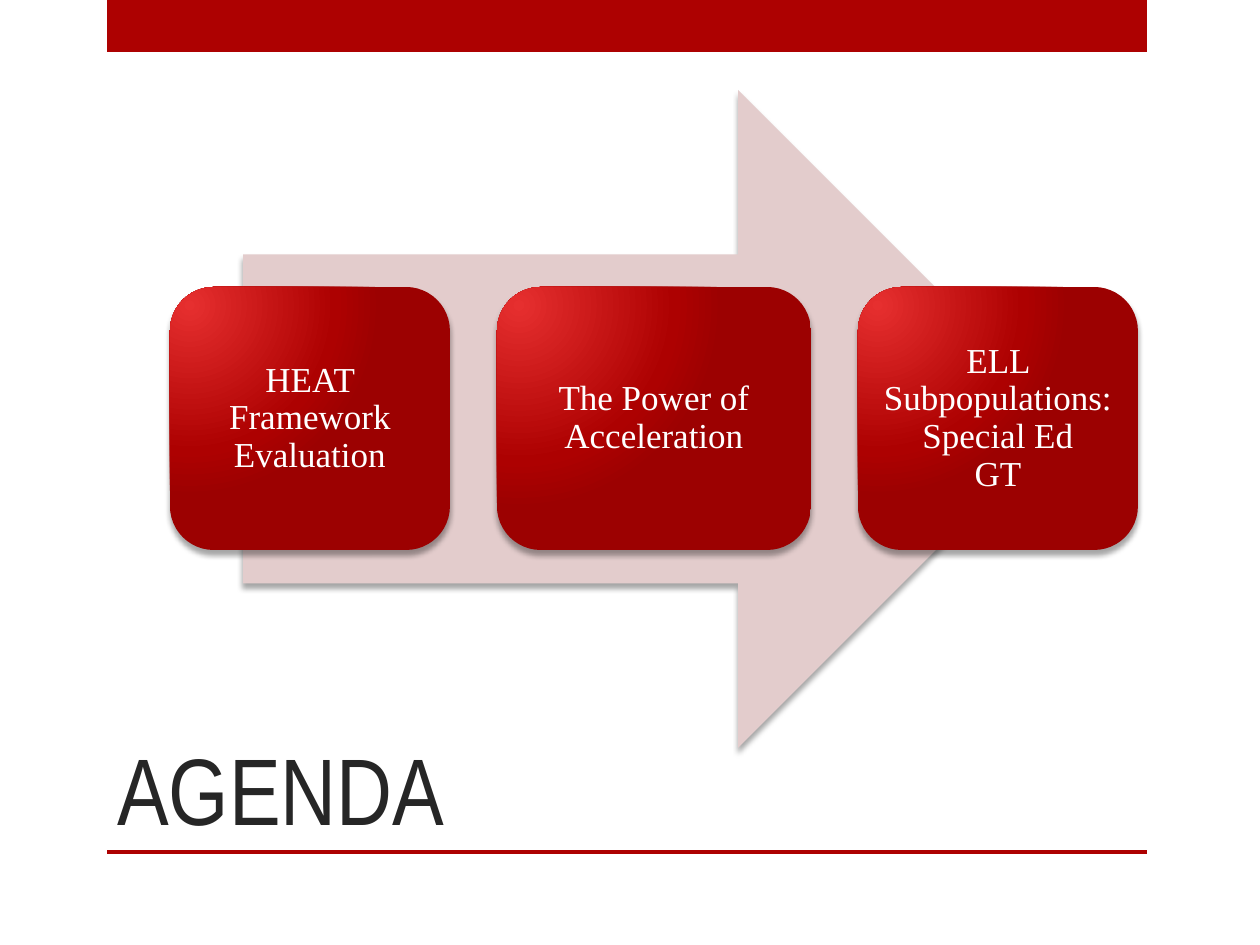
import pptx
import pptx.util
import pptx.dml.color
import pptx.enum.shapes
import pptx.enum.text
import pptx.oxml
import pptx.oxml.ns

PX = 914400 / 126
SHAPE = pptx.enum.shapes.MSO_SHAPE
ANCHOR = pptx.enum.text.MSO_ANCHOR
ALIGN = pptx.enum.text.PP_ALIGN
NS = pptx.oxml.ns.nsdecls("a")


def px(length):
    return pptx.util.Emu(round(length * PX))


def color(hex_value):
    return pptx.dml.color.RGBColor.from_string(hex_value)


class AgendaSlide:
    RED = "AD0101"
    GRADIENT = ((0, "E62F2F"), (76, RED), (100, "9C0101"))

    def __init__(self, slide):
        self.shapes = slide.shapes

    def block(self, kind, left, top, width, height, fill=RED):
        shape = self.shapes.add_shape(kind, px(left), px(top), px(width), px(height))
        shape.shadow.inherit = False
        shape.fill.solid()
        shape.fill.fore_color.rgb = color(fill)
        shape.line.fill.background()
        return shape

    def cast_shadow(self, shape):
        effects = shape._element.spPr.find(pptx.oxml.ns.qn("a:effectLst"))
        effects.append(pptx.oxml.parse_xml(
            f'<a:outerShdw {NS} blurRad="38100" dist="38100" dir="5400000" rotWithShape="0">'
            '<a:srgbClr val="000000"><a:alpha val="35000"/></a:srgbClr></a:outerShdw>'))

    def glow(self, shape):
        """Radial gradient that is lightest near the top left corner."""
        stops = "".join(f'<a:gs pos="{at * 1000}"><a:srgbClr val="{hex_value}"/></a:gs>'
                        for at, hex_value in self.GRADIENT)
        gradient = pptx.oxml.parse_xml(
            f'<a:gradFill {NS} rotWithShape="1"><a:gsLst>{stops}</a:gsLst><a:path path="circle">'
            '<a:fillToRect l="15000" t="15000" r="100000" b="100000"/></a:path></a:gradFill>')
        properties = shape._element.spPr
        properties.replace(properties.find(pptx.oxml.ns.qn("a:solidFill")), gradient)

    def label(self, shape, text, font, size, fill, anchor, align):
        frame = shape.text_frame
        frame.word_wrap = True
        frame.vertical_anchor = anchor
        paragraph = frame.paragraphs[0]
        paragraph.text = text
        paragraph.alignment = align
        for run in paragraph.runs:
            run.font.name = font
            run.font.size = pptx.util.Pt(size)
            run.font.color.rgb = color(fill)
        return frame

    def title(self, text, left, top, width, height):
        box = self.shapes.add_textbox(px(left), px(top), px(width), px(height))
        self.label(box, text, "Arial Narrow", 54, "262626", ANCHOR.BOTTOM, ALIGN.LEFT)

    def arrow(self, left, top, width, height):
        self.cast_shadow(self.block(SHAPE.RIGHT_ARROW, left, top, width, height, "E3CCCC"))

    def topic(self, text, left, top, width, height):
        card = self.block(SHAPE.ROUNDED_RECTANGLE, left, top, width, height)
        self.glow(card)
        self.cast_shadow(card)
        frame = self.label(card, text, "Times New Roman", 20, "FFFFFF",
                           ANCHOR.MIDDLE, ALIGN.CENTER)
        frame.margin_left = frame.margin_right = px(10)
        frame.margin_top = frame.margin_bottom = px(10)
        frame.paragraphs[0].line_spacing = 0.9


def main():
    presentation = pptx.Presentation()
    presentation.slide_width = px(1260)
    presentation.slide_height = px(945)
    agenda = AgendaSlide(presentation.slides.add_slide(presentation.slide_layouts[6]))

    # Top band and bottom rule
    for top, height in ((0, 52), (850, 4)):
        agenda.block(SHAPE.RECTANGLE, 107, top, 1040, height)

    agenda.title("AGENDA", 105, 630, 935, 221)

    # Arrow with the topics in order
    agenda.arrow(243, 90, 824, 658)
    topics = (("HEAT Framework Evaluation", 280),
              ("The Power of Acceleration", 314),
              ("ELL Subpopulations: Special Ed\vGT", 280))
    left, gap = 170, 47
    for text, width in topics:
        agenda.topic(text, left, 287, width, 263)
        left += width + gap

    presentation.save("out.pptx")


if __name__ == "__main__":
    main()
